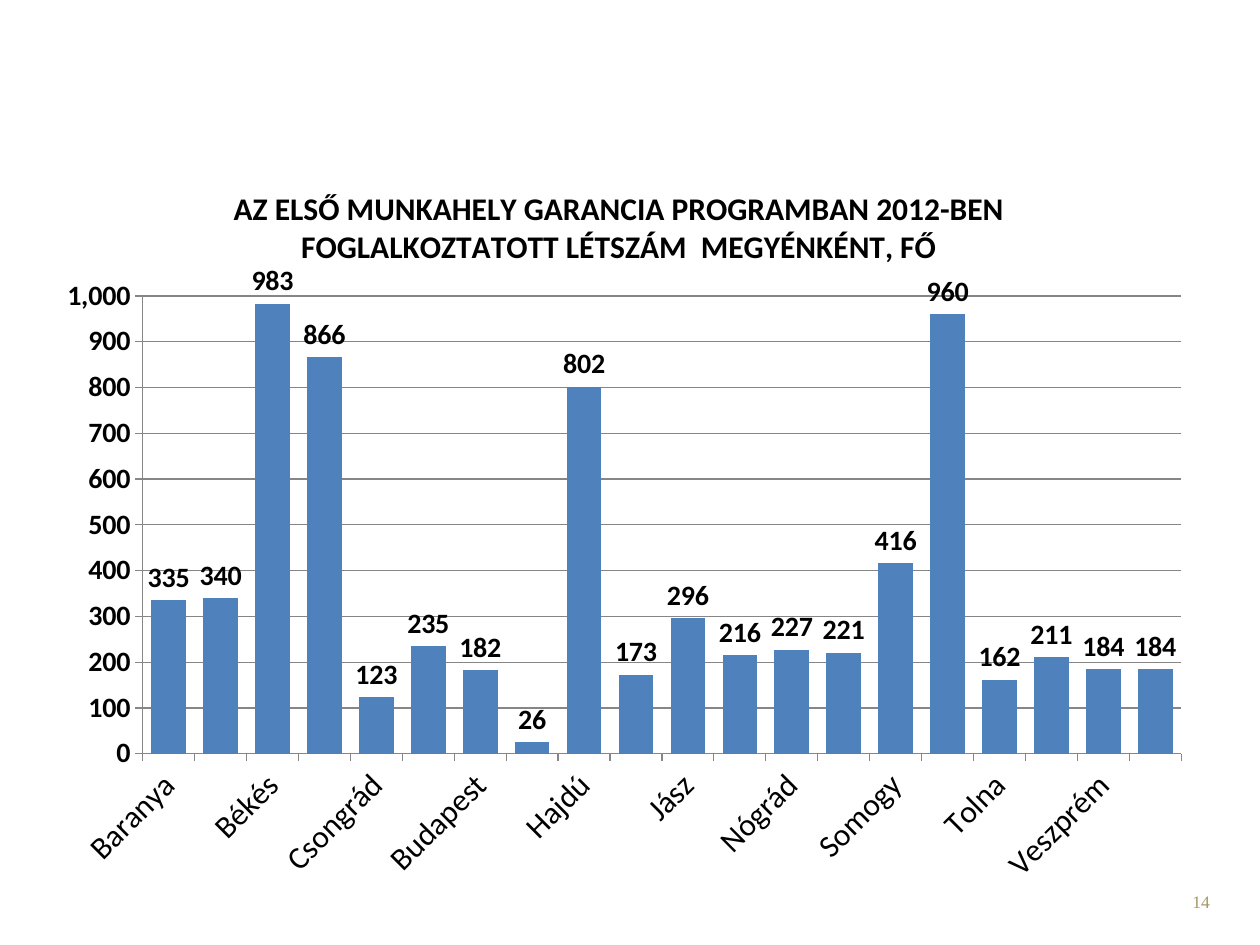
from lxml import etree
from pptx import Presentation
from pptx.chart.data import CategoryChartData
from pptx.dml.color import RGBColor
from pptx.enum.chart import XL_CHART_TYPE, XL_LABEL_POSITION, XL_TICK_MARK
from pptx.enum.text import PP_ALIGN
from pptx.oxml.ns import qn
from pptx.util import Pt

COLUMNS = XL_CHART_TYPE.COLUMN_CLUSTERED
OUTSIDE_END = XL_LABEL_POSITION.OUTSIDE_END
TICK_OUTSIDE = XL_TICK_MARK.OUTSIDE
CENTER = PP_ALIGN.CENTER
RIGHT = PP_ALIGN.RIGHT

COLORS = {"text": "000000", "bar": "4F81BD", "grid": "868686", "number": "A69765"}
NUMBER_FORMAT = "#,##0"
TITLE_LINES = [
    "AZ ELSŐ MUNKAHELY GARANCIA PROGRAMBAN 2012-BEN",
    "FOGLALKOZTATOTT LÉTSZÁM  MEGYÉNKÉNT, FŐ",
]
HEADCOUNTS = {
    "Baranya": 335, "Bács": 340, "Békés": 983, "Borsod": 866, "Csongrád": 123,
    "Fejér": 235, "Budapest": 182, "Győr": 26, "Hajdú": 802, "Heves": 173,
    "Jász": 296, "Komárom": 216, "Nógrád": 227, "Pest": 221, "Somogy": 416,
    "Szabolcs": 960, "Tolna": 162, "Vas": 211, "Veszprém": 184, "Zala": 184,
}


def color(name):
    """Return the named colour."""
    return RGBColor.from_string(COLORS[name])


def style_font(font, size, bold=False, face="Calibri", tint="text"):
    """Set the face, size, weight and colour of a font."""
    font.name = face
    font.size = Pt(size)
    font.bold = bold
    font.color.rgb = color(tint)


def set_layout(parent, index, **settings):
    """Place a chart part by fractions of the chart area."""
    for previous in parent.findall(qn("c:layout")):
        parent.remove(previous)
    layout = etree.Element(qn("c:layout"))
    manual = etree.SubElement(layout, qn("c:manualLayout"))
    for tag, value in settings.items():
        etree.SubElement(manual, qn(f"c:{tag}")).set("val", str(value))
    parent.insert(index, layout)


def style_title(chart):
    """Write the chart title, one paragraph per line."""
    title = chart.chart_title
    frame = title.text_frame
    for number, line in enumerate(TITLE_LINES):
        paragraph = frame.add_paragraph() if number else frame.paragraphs[0]
        paragraph.alignment = CENTER
        run = paragraph.add_run()
        run.text = line
        style_font(run.font, 18, bold=True)
    title.include_in_layout = False
    set_layout(title._element, 1, xMode="edge", yMode="edge", x=0.16, y=0.04)


def style_axes(chart):
    """Format the county axis and the headcount axis."""
    counties, headcount = chart.category_axis, chart.value_axis
    for axis in (counties, headcount):
        axis.major_tick_mark = TICK_OUTSIDE
        axis.format.line.color.rgb = color("grid")
        axis.format.line.width = Pt(0.75)
    style_font(counties.tick_labels.font, 18)
    style_font(headcount.tick_labels.font, 16, bold=True)
    counties._element.find(qn("c:txPr")).find(qn("a:bodyPr")).set("rot", "-2700000")

    headcount.minimum_scale, headcount.maximum_scale = 0, 1000
    headcount.major_unit = 100
    headcount.tick_labels.number_format = NUMBER_FORMAT
    headcount.tick_labels.number_format_is_linked = False
    gridline = headcount.major_gridlines.format.line
    gridline.color.rgb = color("grid")
    gridline.width = Pt(0.75)


def style_columns(chart):
    """Format the columns and their value labels."""
    plot = chart.plots[0]
    plot.gap_width = 50
    plot.vary_by_categories = False
    fill = plot.series[0].format.fill
    fill.solid()
    fill.fore_color.rgb = color("bar")
    plot.has_data_labels = True
    labels = plot.data_labels
    labels.show_value = True
    labels.position = OUTSIDE_END
    labels.number_format = NUMBER_FORMAT
    labels.number_format_is_linked = False
    style_font(labels.font, 16, bold=True)


def add_county_chart(slide):
    """Add the column chart of headcount by county."""
    data = CategoryChartData()
    data.categories = list(HEADCOUNTS)
    data.add_series("Series 1", list(HEADCOUNTS.values()))
    frame = slide.shapes.add_chart(
        COLUMNS, Pt(25.2), Pt(87.84), Pt(663.12), Pt(425.52), data
    )
    chart = frame.chart
    chart.has_legend = False
    style_font(chart.font, 10)
    style_title(chart)
    style_axes(chart)
    style_columns(chart)
    plot_area = chart._chartSpace.find(qn("c:chart")).find(qn("c:plotArea"))
    set_layout(
        plot_area, 0, layoutTarget="inner", xMode="edge", yMode="edge",
        x=0.085, y=0.191, w=0.895, h=0.615,
    )


def add_page_number(slide, number):
    """Add the page number at the bottom right."""
    box = slide.shapes.add_textbox(Pt(530.64), Pt(505.44), Pt(167.76), Pt(28.8))
    box.text_frame.word_wrap = True
    paragraph = box.text_frame.paragraphs[0]
    paragraph.alignment = RIGHT
    run = paragraph.add_run()
    run.text = number
    style_font(run.font, 10, face="Times New Roman", tint="number")


def main():
    """Build and save the slide."""
    deck = Presentation()
    deck.slide_width, deck.slide_height = Pt(720), Pt(540)
    slide = deck.slides.add_slide(deck.slide_layouts[6])
    add_page_number(slide, "14")
    add_county_chart(slide)
    deck.save("out.pptx")


if __name__ == "__main__":
    main()
